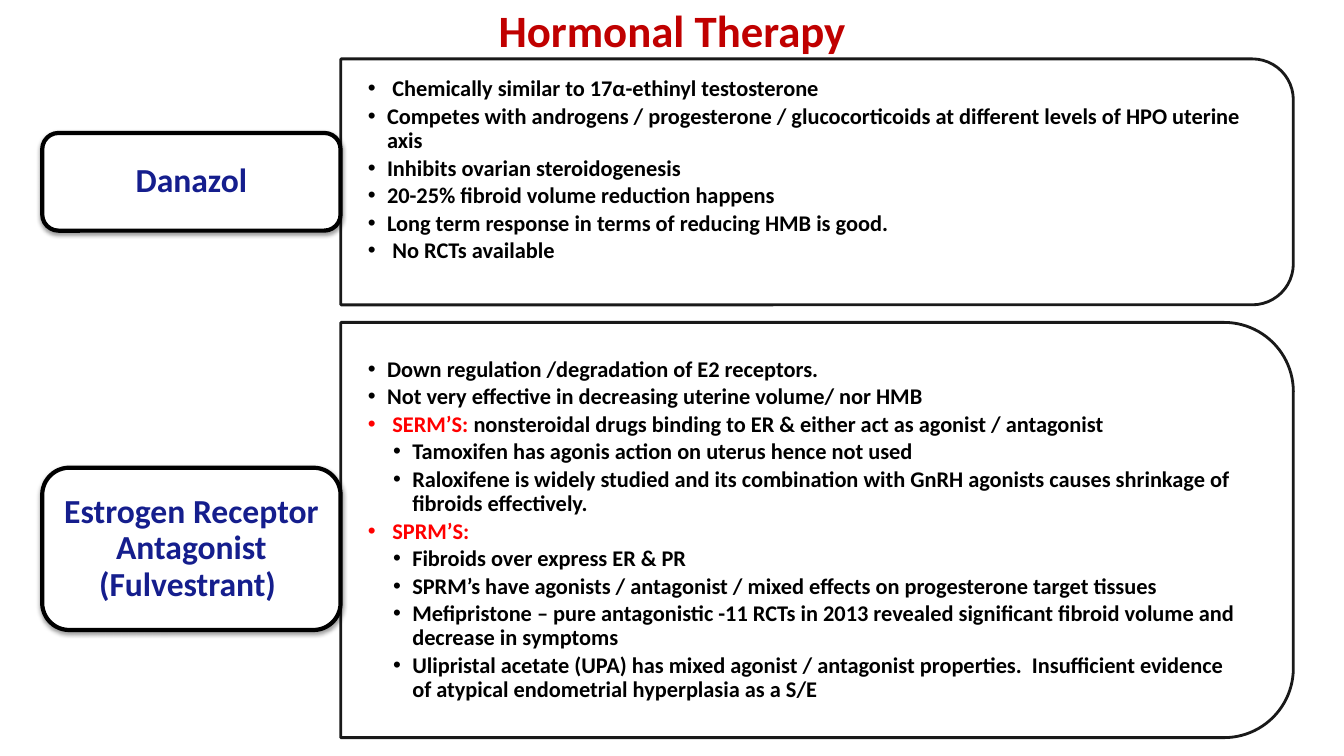
from lxml import etree
from pptx import Presentation
from pptx.dml.color import RGBColor
from pptx.enum.shapes import MSO_SHAPE
from pptx.enum.text import MSO_ANCHOR, MSO_AUTO_SIZE, PP_ALIGN
from pptx.oxml.ns import qn
from pptx.util import Pt

PANEL_SHAPE = MSO_SHAPE.ROUND_2_SAME_RECTANGLE
LABEL_SHAPE = MSO_SHAPE.ROUNDED_RECTANGLE
MIDDLE = MSO_ANCHOR.MIDDLE
CENTER = PP_ALIGN.CENTER
NO_AUTOFIT = MSO_AUTO_SIZE.NONE

BLACK, WHITE, RED = "000000", "FFFFFF", "FF0000"
TITLE_RED, LABEL_BLUE = "C00000", "151E8D"
PANEL_LEFT, PANEL_WIDTH = 243.4, 680.4
LABEL_LEFT, LABEL_WIDTH = 30.2, 213.1

MAIN, WIDE, SUB = (13.7, 13.7, 0), (17.5, 17.5, 0), (31.7, 13.7, 1)

DANAZOL_POINTS = [
    (WIDE, "", "Chemically similar to 17α-ethinyl testosterone"),
    (MAIN, "", "Competes with androgens / progesterone / glucocorticoids at "
               "different levels of HPO uterine axis"),
    (MAIN, "", "Inhibits ovarian steroidogenesis"),
    (MAIN, "", "20-25% fibroid volume reduction happens"),
    (MAIN, "", "Long term response in terms of reducing HMB is good."),
    (WIDE, "", "No RCTs available"),
]
ANTAGONIST_POINTS = [
    (MAIN, "", "Down regulation /degradation of E2 receptors."),
    (MAIN, "", "Not very effective in decreasing uterine volume/ nor HMB"),
    (WIDE, "SERM’S: ", "nonsteroidal drugs binding to ER & either act as "
                       "agonist / antagonist"),
    (SUB, "", "Tamoxifen has agonis action on uterus hence not used"),
    (SUB, "", "Raloxifene is widely studied and its combination with GnRH "
              "agonists causes shrinkage of fibroids effectively."),
    (WIDE, "SPRM’S:", ""),
    (SUB, "", "Fibroids over express ER & PR"),
    (SUB, "", "SPRM’s have agonists / antagonist / mixed effects on "
              "progesterone target tissues"),
    (SUB, "", "Mefipristone – pure antagonistic -11 RCTs in 2013 revealed "
              "significant fibroid volume and decrease in symptoms"),
    (SUB, "", "Ulipristal acetate (UPA) has mixed agonist / antagonist "
              "properties.  Insufficient evidence of atypical endometrial "
              "hyperplasia as a S/E"),
]


def rgb(hex_color):
    """Turn a hex string into a colour."""
    return RGBColor.from_string(hex_color)


def write(paragraph, text, size=16, color=BLACK, align=None, spacing=None):
    """Add a bold run of text to a paragraph."""
    if align is not None:
        paragraph.alignment = align
    if spacing is not None:
        paragraph.line_spacing = spacing
    run = paragraph.add_run()
    run.text = text
    run.font.name = "Calibri"
    run.font.size = Pt(size)
    run.font.bold = True
    run.font.color.rgb = rgb(color)


def set_opacity(color_format_parent, percent):
    """Make every plain colour below an element partly transparent."""
    for color in color_format_parent.iter(qn("a:srgbClr")):
        etree.SubElement(color, qn("a:alpha"), val=str(percent * 1000))


def add_outlined(slide, kind, left, top, width, height, line_width):
    """Add a white shape with a black outline."""
    shape = slide.shapes.add_shape(
        kind, Pt(left), Pt(top), Pt(width), Pt(height))
    shape.shadow.inherit = False
    shape.fill.solid()
    shape.fill.fore_color.rgb = rgb(WHITE)
    shape.line.color.rgb = rgb(BLACK)
    shape.line.width = Pt(line_width)
    return shape


def add_panel(slide, top, height):
    """Add a panel whose two right corners are rounded."""
    left = PANEL_LEFT + (PANEL_WIDTH - height) / 2
    turned_top = top + (height - PANEL_WIDTH) / 2
    panel = add_outlined(
        slide, PANEL_SHAPE, left, turned_top, height, PANEL_WIDTH, 2)
    panel.rotation = 90
    set_opacity(panel._element.spPr, 90)


def add_points(slide, points, top, width, height, bottom_inset=10):
    """Add a bulleted list over a panel."""
    box = slide.shapes.add_textbox(
        Pt(PANEL_LEFT), Pt(top), Pt(width), Pt(height))
    frame = box.text_frame
    frame.word_wrap = True
    frame.vertical_anchor = MIDDLE
    frame.margin_left = frame.margin_right = Pt(19.4)
    frame.margin_top, frame.margin_bottom = Pt(10), Pt(bottom_inset)
    for index, ((margin, hanging, level), lead, text) in enumerate(points):
        paragraph = frame.add_paragraph() if index else frame.paragraphs[0]
        paragraph.level = level
        paragraph.line_spacing = 0.9
        paragraph.space_after = Pt(2.4)
        properties = paragraph._p.get_or_add_pPr()
        properties.set("marL", str(Pt(margin)))
        properties.set("indent", str(-Pt(hanging)))
        etree.SubElement(properties, qn("a:buFont"), typeface="Arial")
        etree.SubElement(properties, qn("a:buChar"), char="•")
        if lead:
            write(paragraph, lead, color=RED)
        if text:
            write(paragraph, text)


def add_label(slide, text, top, height):
    """Add a rounded drug label with a soft shadow."""
    label = add_outlined(
        slide, LABEL_SHAPE, LABEL_LEFT, top, LABEL_WIDTH, height, 3)
    effects = label._element.spPr.find(qn("a:effectLst"))
    shadow = etree.SubElement(
        effects, qn("a:outerShdw"), blurRad=str(Pt(3.1)), dist=str(Pt(1.6)),
        dir="5400000", rotWithShape="0")
    etree.SubElement(shadow, qn("a:srgbClr"), val=BLACK)
    set_opacity(shadow, 38)
    frame = label.text_frame
    frame.word_wrap = True
    frame.vertical_anchor = MIDDLE
    write(frame.paragraphs[0], text, size=24, color=LABEL_BLUE,
          align=CENTER, spacing=0.9)


def set_title(slide, text):
    """Place and format the slide title."""
    title = slide.shapes.title
    title.left, title.top = Pt(156.2), Pt(0)
    title.width, title.height = Pt(648), Pt(42.5)
    frame = title.text_frame
    frame.auto_size = NO_AUTOFIT
    frame.vertical_anchor = MIDDLE
    frame.margin_top = frame.margin_bottom = Pt(0)
    write(frame.paragraphs[0], text, size=32, color=TITLE_RED, align=CENTER)


def main():
    """Build the slide and save it."""
    presentation = Presentation()
    presentation.slide_width, presentation.slide_height = Pt(960), Pt(540)
    slide = presentation.slides.add_slide(presentation.slide_layouts[5])
    set_title(slide, "Hormonal Therapy")

    add_panel(slide, top=42.1, height=175.7)
    add_points(slide, DANAZOL_POINTS, top=50.4, width=671.8, height=158.4,
               bottom_inset=25.5)
    add_label(slide, "Danazol", top=95, height=69.8)

    add_panel(slide, top=230.3, height=296.6)
    add_points(slide, ANTAGONIST_POINTS, top=244.8, width=666, height=267.8)
    add_label(slide, "Estrogen Receptor Antagonist (Fulvestrant) ",
              top=334.1, height=115.9)
    presentation.save("out.pptx")


if __name__ == "__main__":
    main()
